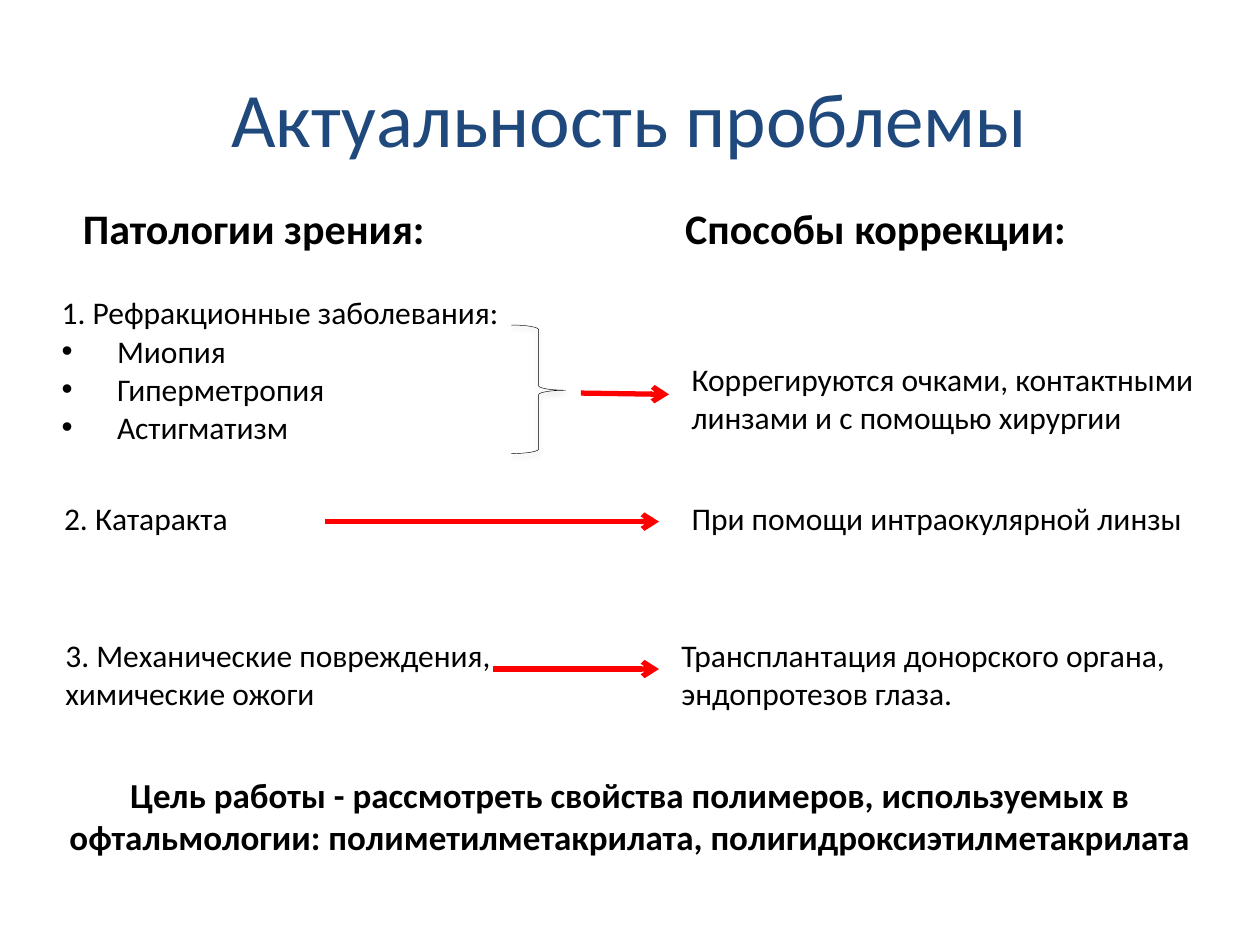
from lxml import etree
from pptx import Presentation, util as u
from pptx.dml.color import RGBColor
from pptx.enum import shapes, text
from pptx.oxml import parse_xml
from pptx.oxml.ns import nsdecls, qn

COLORS = {"title": "1F497D", "text": "000000", "arrow": "FF0000", "bg": "FFFFFF"}
FONT = "Calibri"
W, H = u.Inches(10), u.Inches(7.5)
COL, ROW = W / 100, H / 75
LEFT, RIGHT = 4.1, 53.9


def rgb(name):
    return RGBColor.from_string(COLORS[name])


def grid(*box):
    return [round(v * (ROW if i % 2 else COL)) for i, v in enumerate(box)]


def add_text(s, box, lines, size=18, color="text", bold=False, align="LEFT",
             anchor="TOP", wrap=False, bullet=False, margin=0):
    tf = s.shapes.add_textbox(*grid(*box)).text_frame
    tf.word_wrap = wrap
    tf.vertical_anchor = text.MSO_ANCHOR[anchor]
    for i, line in enumerate(lines):
        p = tf.paragraphs[0] if i == 0 else tf.add_paragraph()
        p.alignment = text.PP_ALIGN[align]
        if margin:
            pPr = p._p.get_or_add_pPr()
            pPr.set("marL", str(round(margin * COL)))
            if bullet:
                pPr.set("indent", str(-round(margin * COL)))
                etree.SubElement(pPr, qn("a:buFont")).set("typeface", "Arial")
                etree.SubElement(pPr, qn("a:buChar")).set("char", "•")
        r = p.add_run()
        r.text = line
        r.font.name, r.font.size, r.font.bold = FONT, u.Pt(size), bold
        r.font.color.rgb = rgb(color)


def add_arrow(s, x1, y1, x2, y2):
    c = s.shapes.add_connector(shapes.MSO_CONNECTOR.STRAIGHT, *grid(x1, y1, x2, y2))
    c.line.color.rgb = rgb("arrow")
    c.line.width = u.Pt(3)
    etree.SubElement(c.line._get_or_add_ln(), qn("a:tailEnd")).set("type", "arrow")
    etree.SubElement(c._element.spPr, qn("a:effectLst"))


def add_brace(s, box):
    sp = s.shapes.add_shape(shapes.MSO_SHAPE.RIGHT_BRACE, *grid(*box))
    sp.adjustments[0], sp.adjustments[1] = 0.083, 0.507
    sp.fill.background()
    sp.line.color.rgb = rgb("text")
    sp.line.width = u.Pt(0.25)
    sp._element.spPr.append(parse_xml(
        f'<a:effectLst {nsdecls("a")}><a:outerShdw blurRad="40000" dist="23000" '
        f'dir="5400000" rotWithShape="0"><a:srgbClr val="{COLORS["text"]}">'
        '<a:alpha val="35000"/></a:srgbClr></a:outerShdw></a:effectLst>'))


def headings(s, x, y, w, h):
    for left, line in ((x, "Патологии зрения:"), (x + 47.8, "Способы коррекции:")):
        add_text(s, (left, y, w, h), [line], size=24, bold=True)


def refraction(s, x, y, w, h):
    add_text(s, (x, y, w, 4), ["1. Рефракционные заболевания:"])
    add_text(s, (x, y + 3.05, w, h - 3), ["Миопия", "Гиперметропия", "Астигматизм"],
             bullet=True, margin=4.4)
    add_brace(s, (40.6, y + 3, 4.3, 10.2))
    add_arrow(s, 46.1, y + 8.4, 53.1, y + 8.5)
    add_text(s, (RIGHT, y + 5.3, 52.3, 7.1),
             ["Коррегируются очками, контактными", "линзами и с помощью хирургии"], wrap=True)


def pair(s, x, y, w, h, left, right, arrow_x, arrow_y, right_x=RIGHT):
    add_text(s, (x, y, w, h), left)
    add_arrow(s, arrow_x, y + arrow_y, 52.3, y + arrow_y)
    add_text(s, (right_x, y, 41.4, h), right)


def main():
    prs = Presentation()
    prs.slide_width, prs.slide_height = W, H
    s = prs.slides.add_slide(prs.slide_layouts[6])
    s.background.fill.solid()
    s.background.fill.fore_color.rgb = rgb("bg")
    add_text(s, (5, 3, 90, 12.5), ["Актуальность проблемы"], size=44, color="title",
             align="CENTER", anchor="MIDDLE", wrap=True)
    headings(s, 5.6, 15.6, 40, 5)
    refraction(s, 3.9, 22.8, 37.1, 13.2)
    pair(s, LEFT, 39.1, 15.2, 4, ["2. Катаракта"],
         ["При помощи интраокулярной линзы"], 25.8, 2.3)
    pair(s, LEFT + 0.1, 50, 36.2, 7.1, ["3. Механические повреждения,", "химические ожоги"],
         ["Трансплантация донорского органа,", "эндопротезов глаза."], 39.1, 3.1, right_x=53.1)
    add_text(s, (0, 60.9, 100, 7.7),
             ["Цель работы - рассмотреть свойства полимеров, используемых в офтальмологии: "
              "полиметилметакрилата, полигидроксиэтилметакрилата"],
             size=20, bold=True, align="CENTER", wrap=True)
    prs.save("out.pptx")


if __name__ == "__main__":
    main()
